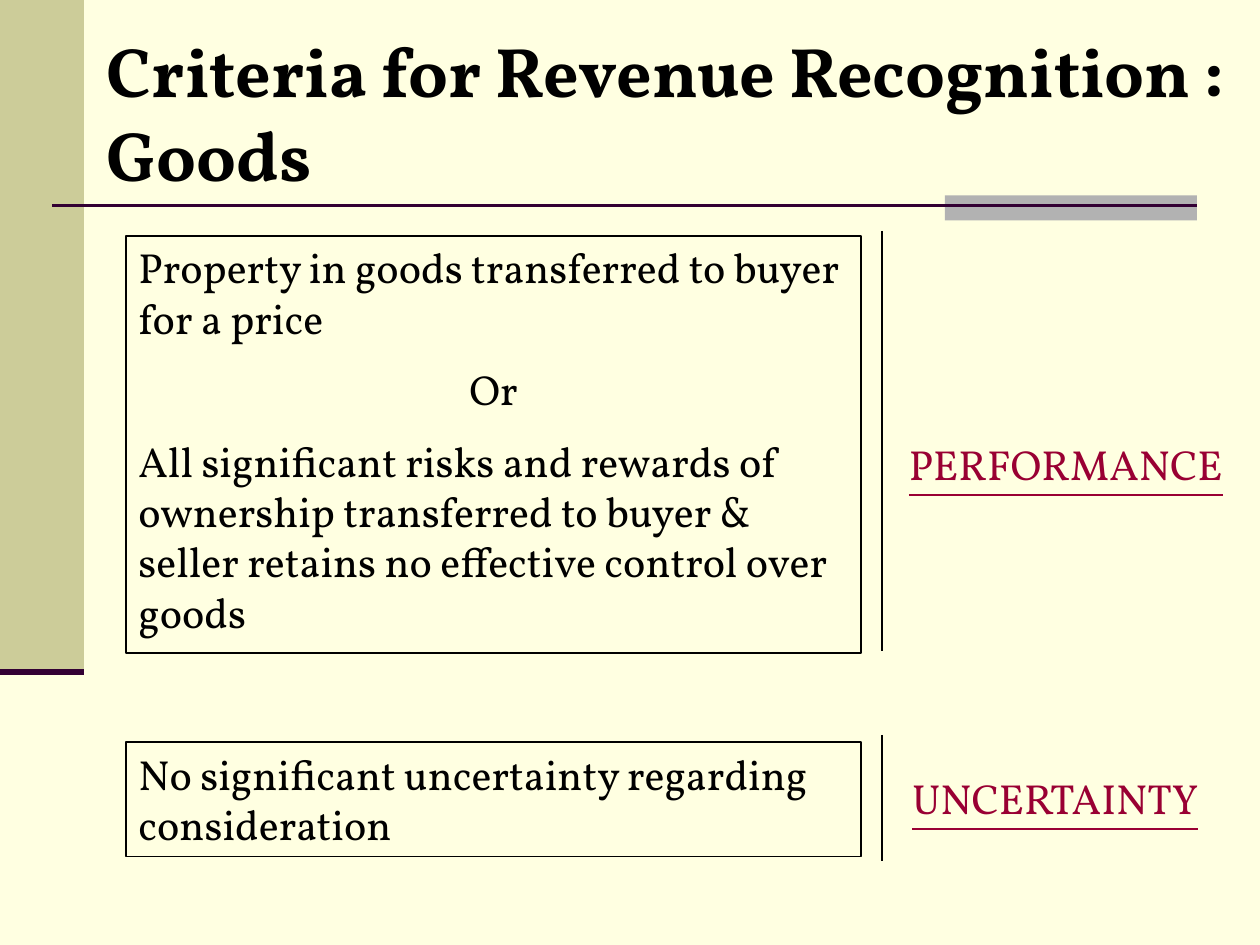
from lxml import etree
from pptx import Presentation
from pptx.dml.color import RGBColor
from pptx.enum import shapes, text
from pptx.oxml.ns import qn
from pptx.util import Pt

COLORS = {
    "paper": "FFFFE1",
    "strip": "CCCC99",
    "accent": "B2B2B2",
    "rule": "330033",
    "ink": "000000",
    "criterion": "990033",
}
LEFT, CENTER = text.PP_ALIGN.LEFT, text.PP_ALIGN.CENTER


def rgb(name):
    return RGBColor.from_string(COLORS[name])


class SlideBuilder:
    """Holds the text style and the slide being filled; lengths are in points."""

    font = "Vollkorn"
    body_size = 24

    def __init__(self, slide):
        self.slide = slide
        slide.background.fill.solid()
        slide.background.fill.fore_color.rgb = rgb("paper")

    def block(self, left, top, width, height, fill=None, line=None):
        rect = self.slide.shapes.add_shape(
            shapes.MSO_SHAPE.RECTANGLE, Pt(left), Pt(top), Pt(width), Pt(height))
        rect.shadow.inherit = False
        if fill:
            rect.fill.solid()
            rect.fill.fore_color.rgb = rgb(fill)
        else:
            rect.fill.background()
        if line:
            rect.line.color.rgb = rgb(line)
            rect.line.width = Pt(1)
        else:
            rect.line.fill.background()
        return rect

    def line(self, x1, y1, x2, y2, color="ink", width=0.75):
        rule = self.slide.shapes.add_connector(
            shapes.MSO_CONNECTOR.STRAIGHT, Pt(x1), Pt(y1), Pt(x2), Pt(y2))
        rule.line.color.rgb = rgb(color)
        rule.line.width = Pt(width)
        etree.SubElement(rule._element.spPr, qn("a:effectLst"))

    def set_text(self, frame, paragraphs, size=body_size, color="ink", bold=False,
                 underline=False):
        """Fill a frame with (wording, alignment) pairs, half a line size apart."""
        frame.word_wrap = True
        frame.vertical_anchor = text.MSO_ANCHOR.TOP
        for index, (wording, alignment) in enumerate(paragraphs):
            paragraph = frame.add_paragraph() if index else frame.paragraphs[0]
            paragraph.alignment = alignment
            if index:
                paragraph.space_before = Pt(size / 2)
            run = paragraph.add_run()
            run.text = wording
            run.font.name = self.font
            run.font.size = Pt(size)
            run.font.bold = bold
            run.font.underline = underline
            run.font.color.rgb = rgb(color)

    def text_box(self, left, top, width, height, wording, alignment=LEFT, **style):
        box = self.slide.shapes.add_textbox(Pt(left), Pt(top), Pt(width), Pt(height))
        self.set_text(box.text_frame, [(wording, alignment)], **style)

    def framed_text(self, top, height, paragraphs):
        frame = self.block(72, top, 420, height, line="ink")
        self.set_text(frame.text_frame, paragraphs)

    def criterion(self, left, top, wording):
        self.text_box(left, top, 210, 36, wording, CENTER, color="criterion", underline=True)


def main():
    deck = Presentation()
    deck.slide_width, deck.slide_height = Pt(720), Pt(540)
    page = SlideBuilder(deck.slides.add_slide(deck.slide_layouts[6]))

    page.block(0, 0, 48, 384, fill="strip")
    page.block(540, 111.6, 144, 14.4, fill="accent")
    page.line(30, 117.5, 684, 117.5, "rule", 1.5)
    page.line(0, 384, 48, 384, "rule", 3.5)
    page.text_box(54, 12, 666, 103, "Criteria for Revenue Recognition : Goods",
                  size=40, bold=True)

    page.framed_text(134.75, 238.5, [
        ("Property in goods transferred to buyer for a price", LEFT),
        ("Or", CENTER),
        ("All significant risks and rewards of ownership transferred to buyer & "
         "seller retains no effective control over goods", LEFT),
    ])
    page.framed_text(424, 65.5, [
        ("No significant uncertainty regarding consideration", LEFT),
    ])

    page.line(504, 132, 504, 372)
    page.criterion(504, 247, "PERFORMANCE")
    page.line(504, 420, 504, 492)
    page.criterion(498, 438, "UNCERTAINTY")

    deck.save("out.pptx")


if __name__ == "__main__":
    main()
